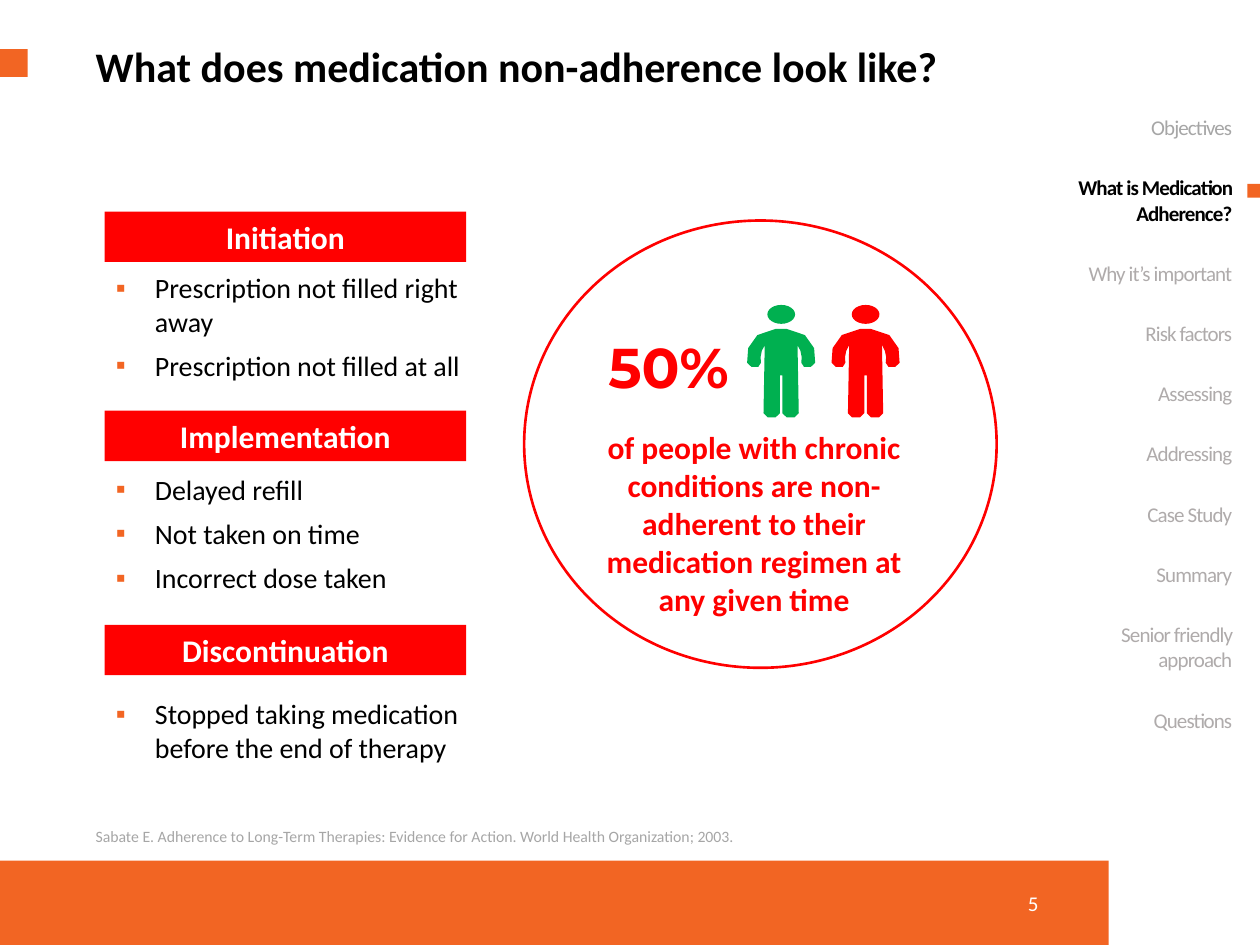
import pptx
import pptx.util
import pptx.dml.color
import pptx.enum.shapes
import pptx.enum.text
import pptx.oxml.ns
from lxml import etree

PX = 9144  # EMU per px, 100 px to the inch
COLORS = {
    "orange": "F26523", "red": "FF0000", "green": "00B050", "black": "000000",
    "white": "FFFFFF", "gray": "A6A6A6", "warm_gray": "AFABAB",
}
ALIGN = pptx.enum.text.PP_ALIGN
ANCHOR = pptx.enum.text.MSO_ANCHOR
SHAPE = pptx.enum.shapes.MSO_SHAPE

STAGES = [  # heading, heading top, list top, list width, list height, items
    ("Initiation", 168, 210, 299, 99,
     ["Prescription not filled right away", "Prescription not filled at all"]),
    ("Implementation", 326, 370, 288, 108,
     ["Delayed refill", "Not taken on time", "Incorrect dose taken"]),
    ("Discontinuation", 496, 548, 299, 64,
     ["Stopped taking medication before the end of therapy"]),
]
SECTIONS = [
    "Objectives", "What is Medication Adherence?", "Why it’s important",
    "Risk factors", "Assessing", "Addressing", "Case Study", "Summary",
    "Senior friendly approach", "Questions",
]
# Left half of a body, 58 px wide: points (2) and cubic curves (6)
BODY_WIDTH = 58
BODY_HALF = [
    (25, 19), (6, 20, 0, 35, 2, 46), (3, 51, 14, 51, 13, 46),
    (12, 42, 13, 36, 16, 32), (15, 86), (15, 91, 28, 91, 28, 86), (28, 56),
]


def rgb(name):
    return pptx.dml.color.RGBColor.from_string(COLORS[name])


def place(s, x, y, w, h):
    s.left, s.top, s.width, s.height = (v * PX for v in (x, y, w, h))
    return s


def add_bullet(p, color):
    pPr = p._p.get_or_add_pPr()
    indent = 31 * PX
    pPr.set("marL", str(indent))
    pPr.set("indent", str(-indent))
    qn = pptx.oxml.ns.qn
    clr = etree.SubElement(pPr, qn("a:buClr"))
    etree.SubElement(clr, qn("a:srgbClr"), val=COLORS[color])
    etree.SubElement(pPr, qn("a:buFont"), typeface="Arial")
    etree.SubElement(pPr, qn("a:buChar"), char="▪")


def write(s, text, size=16, color="black", bold=False, font="Calibri",
          align=ALIGN.LEFT, anchor=ANCHOR.TOP, after=0, line=1.0,
          bullet=None, spacing=None):
    """Fill a shape with text; a list gives one paragraph per item."""
    tf = s.text_frame
    tf.word_wrap = True
    tf.auto_size = pptx.enum.text.MSO_AUTO_SIZE.NONE
    tf.vertical_anchor = anchor
    tf.margin_left = tf.margin_right = 10 * PX
    tf.margin_top = tf.margin_bottom = 5 * PX
    for i, item in enumerate([text] if isinstance(text, str) else text):
        p = tf.add_paragraph() if i else tf.paragraphs[0]
        if bullet:
            add_bullet(p, bullet)
        p.alignment, p.line_spacing = align, line
        p.space_before, p.space_after = 0, pptx.util.Pt(after)
        r = p.add_run()
        r.text = item
        r.font.name, r.font.bold = font, bold
        r.font.size = pptx.util.Pt(size)
        r.font.color.rgb = rgb(color)
        if spacing:
            r._r.get_or_add_rPr().set("spc", str(spacing))
    return s


def add_text(shapes, x, y, w, h, text, **fmt):
    return write(shapes.add_textbox(x * PX, y * PX, w * PX, h * PX), text, **fmt)


def paint(s, fill):
    s.shadow.inherit = False
    s.fill.solid()
    s.fill.fore_color.rgb = rgb(fill)
    s.line.fill.background()
    return s


def add_filled(shapes, kind, x, y, w, h, fill):
    return paint(shapes.add_shape(kind, x * PX, y * PX, w * PX, h * PX), fill)


def body_outline(steps=3):
    """Sample the left half, then mirror it into a closed outline."""
    half = []
    for seg in BODY_HALF:
        if len(seg) == 2:
            half.append(seg)
            continue
        (x0, y0), (x1, y1, x2, y2, x3, y3) = half[-1], seg
        for t in (i / steps for i in range(1, steps + 1)):
            a, b, c, d = (1 - t) ** 3, 3 * t * (1 - t) ** 2, 3 * t * t * (1 - t), t ** 3
            half.append((a * x0 + b * x1 + c * x2 + d * x3,
                         a * y0 + b * y1 + c * y2 + d * y3))
    return half + [(BODY_WIDTH - x, y) for x, y in reversed(half)]


def add_person(shapes, x, y, color):
    add_filled(shapes, SHAPE.OVAL, x + 18, y, 22, 15, color)
    points = [((x + dx) * PX, (y + dy) * PX) for dx, dy in body_outline()]
    fb = shapes.build_freeform(*points[0])
    fb.add_line_segments(points[1:], close=True)
    paint(fb.convert_to_shape(), color)


def add_frame(slide):
    """Title, accent, footer band, page number and citation."""
    shapes = slide.shapes
    add_filled(shapes, SHAPE.RECTANGLE, 0, 39, 22, 22, "orange")
    add_filled(shapes, SHAPE.RECTANGLE, 0, 683, 880, 67, "orange")
    add_text(shapes, 806, 697, 52, 40, "5", size=12, color="white",
             anchor=ANCHOR.MIDDLE)
    add_text(shapes, 66, 651, 839, 25,
             "Sabate E. Adherence to Long-Term Therapies: Evidence for Action. "
             "World Health Organization;\u00a02003.", size=9, color="gray")
    write(place(shapes.title, 66, 32, 725, 50),
          "What does medication non-adherence look like?", size=24, bold=True,
          line=0.9)


def add_sidebar(slide, ph, x, y, w, h, current):
    add_filled(slide.shapes, SHAPE.RECTANGLE, x + 153, y + 60, 11, 11, "orange")
    write(place(ph, x, y, w, h), SECTIONS, size=12, color="warm_gray",
          align=ALIGN.RIGHT, after=20, spacing=-50)
    paragraphs = ph.text_frame.paragraphs
    paragraphs[0].runs[0].font.color.rgb = rgb("gray")
    font = paragraphs[current].runs[0].font
    font.bold, font.color.rgb = True, rgb("black")


def add_stages(slide, placeholders, x):
    for ph, (name, top, list_top, w, h, items) in zip(placeholders, STAGES):
        s = add_filled(slide.shapes, SHAPE.RECTANGLE, x, top, 287, 40, "red")
        write(s, name, size=18, color="white", bold=True, align=ALIGN.CENTER)
        write(place(ph, x - 1, list_top, w, h), items, after=6, bullet="orange")


def add_callout(slide, x, y, w, h):
    shapes = slide.shapes.add_group_shape().shapes
    for dx, color in ((175, "green"), (242, "red")):
        add_person(shapes, x + dx, y + 67, color)
    add_text(shapes, x + 37, y + 160, 291, 162,
             "of people with chronic conditions are non-adherent to their "
             "medication regimen at any given time",
             size=18, color="red", bold=True, align=ALIGN.CENTER)
    add_text(shapes, x + 57, y + 84, 130, 64, "50%", size=32, color="red",
             bold=True, font="Montserrat")
    ring = add_filled(shapes, SHAPE.OVAL, x, y, w, h, "white")
    ring.fill.background()
    ring.line.color.rgb = rgb("red")
    ring.line.width = pptx.util.Pt(1.5)


def main():
    prs = pptx.Presentation()
    prs.slide_width, prs.slide_height = 1000 * PX, 750 * PX
    slide = prs.slides.add_slide(prs.slide_layouts[4])  # title and four bodies
    sidebar, *lists = [ph for ph in slide.placeholders
                       if ph.placeholder_format.idx > 0]
    add_frame(slide)
    add_sidebar(slide, sidebar, 837, 86, 151, 505, current=1)
    add_stages(slide, lists, 83)
    add_callout(slide, 416, 175, 375, 355)
    prs.save("out.pptx")


if __name__ == "__main__":
    main()
